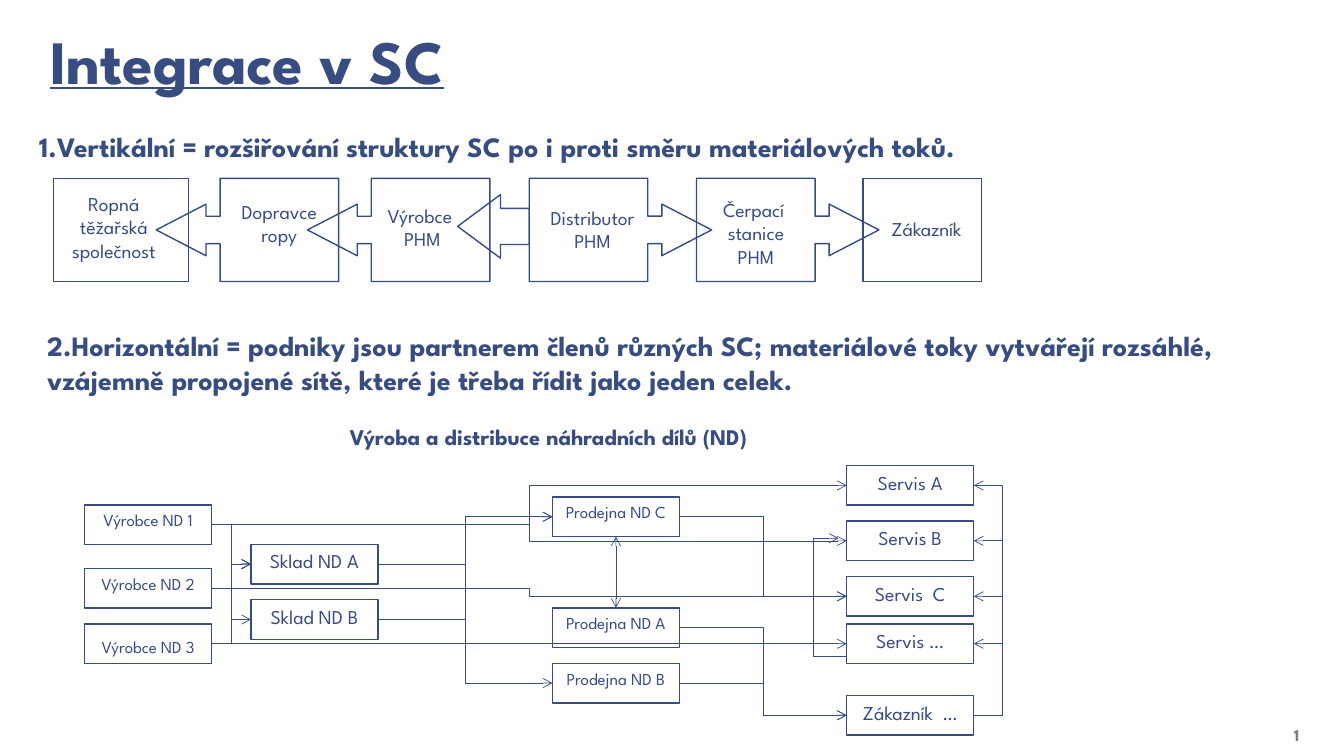
from dataclasses import dataclass

from lxml import etree
from pptx import Presentation
from pptx.dml.color import RGBColor
from pptx.enum.shapes import MSO_CONNECTOR, MSO_SHAPE
from pptx.enum.text import MSO_ANCHOR, PP_ALIGN
from pptx.oxml import parse_xml
from pptx.oxml.ns import nsdecls, qn
from pptx.util import Pt


@dataclass(frozen=True)
class Theme:
    font: str = "League Spartan"
    ink: RGBColor = RGBColor(0x37, 0x4C, 0x81)
    muted: RGBColor = RGBColor(0x7F, 0x7F, 0x7F)
    title: int = 44
    heading: int = 20
    subheading: int = 16
    label: int = 14
    small: int = 12
    outline: float = 1
    flow: float = 0.5


THEME = Theme()

TITLE = "Integrace v SC"
# text, size, (left, top, width, height)
HEADINGS = [
    ("1.Vertikální = rozšiřování struktury SC po i proti směru materiálových toků.",
     THEME.heading, (20.9, 88.6, 760, 31.5)),
    ("2.Horizontální = podniky jsou partnerem členů různých SC; materiálové toky "
     "vytvářejí rozsáhlé, vzájemně propojené sítě, které je třeba řídit jako jeden celek.",
     THEME.heading, (26.6, 231.1, 930, 55.7)),
    ("Výroba a distribuce náhradních dílů (ND)", THEME.subheading, (242.6, 298.8, 380, 26.8)),
]

# lines, (left, top, width) of each label
CHAIN_LABELS = [
    (["Ropná těžařská společnost"], (33.1, 133.2, 96.5)),
    (["Dopravce ropy"], (157, 139, 85)),
    (["Výrobce ", "PHM"], (265, 141.8, 73.4)),
    (["Distributor", "PHM"], (378, 143.3, 90.7)),
    (["Čerpací ", "stanice", "PHM"], (497.5, 137.5, 85)),
    (["Zákazník"], (610.6, 151.2, 102.2)),
]
CHAIN_TOP, CHAIN_HEIGHT = 127.4, 73.7
CALLOUT_WIDTH = 130.3
CALLOUT_ADJUST = (0.266, 0.25, 0.482, 0.65)
CALLOUTS = [(378, 0), (497.5, 0), (219.6, 180), (111.6, 180)]  # left, rotation
CHAIN_ENDS = [(38.2, 96.5), (616.3, 85)]  # left, width
SUPPLY_ARROW = (326.9, 139, 51.1, 45.4)
SUPPLY_ADJUST = (0.569, 0.673)

NODE_WIDTH, NODE_HEIGHT = 90.7, 28.3
TEXT_INSET = 3.6
# left, text size, {name: top}
COLUMNS = [
    (60.5, THEME.small, {"Výrobce ND 1": 360.7, "Výrobce ND 2": 406.1, "Výrobce ND 3": 445.7}),
    (179.3, THEME.label, {"Sklad ND A": 388.8, "Sklad ND B": 428.4}),
    (394.6, THEME.small,
     {"Prodejna ND C": 355, "Prodejna ND A": 434.2, "Prodejna ND B": 473.8}),
    (604.8, THEME.label,
     {"Servis A": 332.6, "Servis B": 372.2, "Servis  C": 411.8, "Servis …": 445.7,
      "Zákazník  …": 496.8}),
]
LOWERED = {"Výrobce ND 3": 5.8}  # extra space above the text
FLOWS = {
    "Výrobce ND 1": ["Sklad ND A", "Servis A", "Servis B"],
    "Výrobce ND 2": ["Sklad ND A", "Sklad ND B", "Servis  C"],
    "Výrobce ND 3": ["Sklad ND A", "Servis …"],
    "Sklad ND A": ["Prodejna ND C"],
    "Sklad ND B": ["Prodejna ND B", "Prodejna ND C"],
    "Prodejna ND C": ["Servis  C"],
    "Prodejna ND A": ["Zákazník  …"],
    "Prodejna ND B": ["Zákazník  …"],
}
RETURNS_FROM = "Zákazník  …"
RETURNS_TO = ["Servis …", "Servis  C", "Servis B", "Servis A"]
RETURN_LANE = 713.5
FEEDBACK = ((604.8, 468.7), (599, 384.5), 581)  # start, end, lane
TOP, LEFT, BOTTOM, RIGHT = range(4)


def style(paragraph, size, color=THEME.ink, bold=False, align=PP_ALIGN.LEFT):
    paragraph.alignment = align
    font = paragraph.font
    font.name, font.size, font.bold = THEME.font, Pt(size), bold
    font.color.rgb = color


def add_text(slide, lines, box, size, **look):
    frame = slide.shapes.add_textbox(*map(Pt, box)).text_frame
    frame.word_wrap = True
    frame.text = "\n".join(lines)
    for paragraph in frame.paragraphs:
        style(paragraph, size, **look)
    return frame


def add_outline(slide, preset, box, rotation=0, adjust=()):
    shape = slide.shapes.add_shape(preset, *map(Pt, box))
    shape.shadow.inherit = False
    shape.fill.background()
    shape.line.color.rgb = THEME.ink
    shape.line.width = Pt(THEME.outline)
    shape.rotation = rotation
    for index, value in enumerate(adjust):
        shape.adjustments[index] = value
    return shape


def add_node(slide, name, left, top, size):
    node = add_outline(slide, MSO_SHAPE.RECTANGLE, (left, top, NODE_WIDTH, NODE_HEIGHT))
    frame = node.text_frame
    frame.vertical_anchor = MSO_ANCHOR.TOP
    frame.margin_left = frame.margin_right = 0
    frame.margin_top = Pt(TEXT_INSET + LOWERED.get(name, 0))
    frame.margin_bottom = 0
    frame.text = name
    style(frame.paragraphs[0], size, align=PP_ALIGN.CENTER)
    return node


def add_arrow(slide, kind, start=(0, 0), end=(0, 0), ends=("tailEnd",)):
    arrow = slide.shapes.add_connector(kind, *map(Pt, start + end))
    arrow.line.color.rgb = THEME.ink
    arrow.line.width = Pt(THEME.flow)
    for tag in ends:
        etree.SubElement(arrow.line._get_or_add_ln(), qn(f"a:{tag}"), type="arrow")
    etree.SubElement(arrow._element.spPr, qn("a:effectLst"))
    return arrow


def glue(arrow, source, source_site, target, target_site):
    arrow.begin_connect(source, source_site)
    arrow.end_connect(target, target_site)


def add_lane_arrow(slide, start, end, lane):
    """Elbow arrow whose vertical part runs at x = lane, outside its two ends."""
    arrow = add_arrow(slide, MSO_CONNECTOR.ELBOW, start, end)
    share = round((lane - start[0]) / (end[0] - start[0]) * 100000)
    guides = arrow._element.spPr.find(qn("a:prstGeom")).get_or_add_avLst()
    etree.SubElement(guides, qn("a:gd"), name="adj1", fmla=f"val {share}")


def add_title(slide):
    title = slide.shapes.title
    title.left, title.top, title.width, title.height = map(Pt, (26.6, -36, 800, 110.2))
    frame = title.text_frame
    frame.text = TITLE
    frame.vertical_anchor = MSO_ANCHOR.BOTTOM
    frame.margin_left = frame.margin_right = Pt(9.4)
    frame.margin_top = frame.margin_bottom = Pt(5)
    heading = frame.paragraphs[0]
    style(heading, THEME.title, bold=True)
    heading.font.underline = True
    heading.line_spacing = 0.85


def add_page_number(slide):
    frame = add_text(slide, [""], (850.3, 511.9, 87.1, 25.2), THEME.small,
                     color=THEME.muted, bold=True, align=PP_ALIGN.RIGHT)
    frame.vertical_anchor = MSO_ANCHOR.BOTTOM
    frame.margin_right = Pt(9.4)
    frame.margin_bottom = Pt(5)
    frame.paragraphs[0]._p.append(parse_xml(
        f'<a:fld {nsdecls("a")} id="{{B6F15528-21DE-4FAA-801E-634DDDAF4B2B}}" '
        'type="slidenum"><a:rPr lang="cs-CZ"/><a:t>5</a:t></a:fld>'))


def add_chain(slide):
    for lines, (left, top, width) in CHAIN_LABELS:
        add_text(slide, lines, (left, top, width, 58), THEME.label, align=PP_ALIGN.CENTER)
    for left, rotation in CALLOUTS:
        add_outline(slide, MSO_SHAPE.RIGHT_ARROW_CALLOUT,
                    (left, CHAIN_TOP, CALLOUT_WIDTH, CHAIN_HEIGHT), rotation, CALLOUT_ADJUST)
    for left, width in CHAIN_ENDS:
        add_outline(slide, MSO_SHAPE.RECTANGLE, (left, CHAIN_TOP, width, CHAIN_HEIGHT))
    add_outline(slide, MSO_SHAPE.RIGHT_ARROW, SUPPLY_ARROW, 180, SUPPLY_ADJUST)


def add_network(slide):
    nodes = {name: add_node(slide, name, left, top, size)
             for left, size, tops in COLUMNS for name, top in tops.items()}
    for source, targets in FLOWS.items():
        for target in targets:
            glue(add_arrow(slide, MSO_CONNECTOR.ELBOW),
                 nodes[source], RIGHT, nodes[target], LEFT)
    exchange = add_arrow(slide, MSO_CONNECTOR.STRAIGHT, ends=("headEnd", "tailEnd"))
    glue(exchange, nodes["Prodejna ND A"], TOP, nodes["Prodejna ND C"], BOTTOM)

    service_left, _, service_tops = COLUMNS[-1]
    edge = service_left + NODE_WIDTH
    middle = {name: top + NODE_HEIGHT / 2 for name, top in service_tops.items()}
    for target in RETURNS_TO:
        # the lane is a share of the width, so the ends differ slightly in x
        add_lane_arrow(slide, (edge, middle[RETURNS_FROM]), (edge + 0.1, middle[target]),
                       RETURN_LANE)
    add_lane_arrow(slide, *FEEDBACK)


def main():
    deck = Presentation()
    deck.slide_width, deck.slide_height = Pt(960), Pt(540)
    slide = deck.slides.add_slide(deck.slide_layouts[5])
    add_title(slide)
    for text, size, box in HEADINGS:
        add_text(slide, [text], box, size, bold=True)
    add_chain(slide)
    add_network(slide)
    add_page_number(slide)
    deck.save("out.pptx")


if __name__ == "__main__":
    main()
